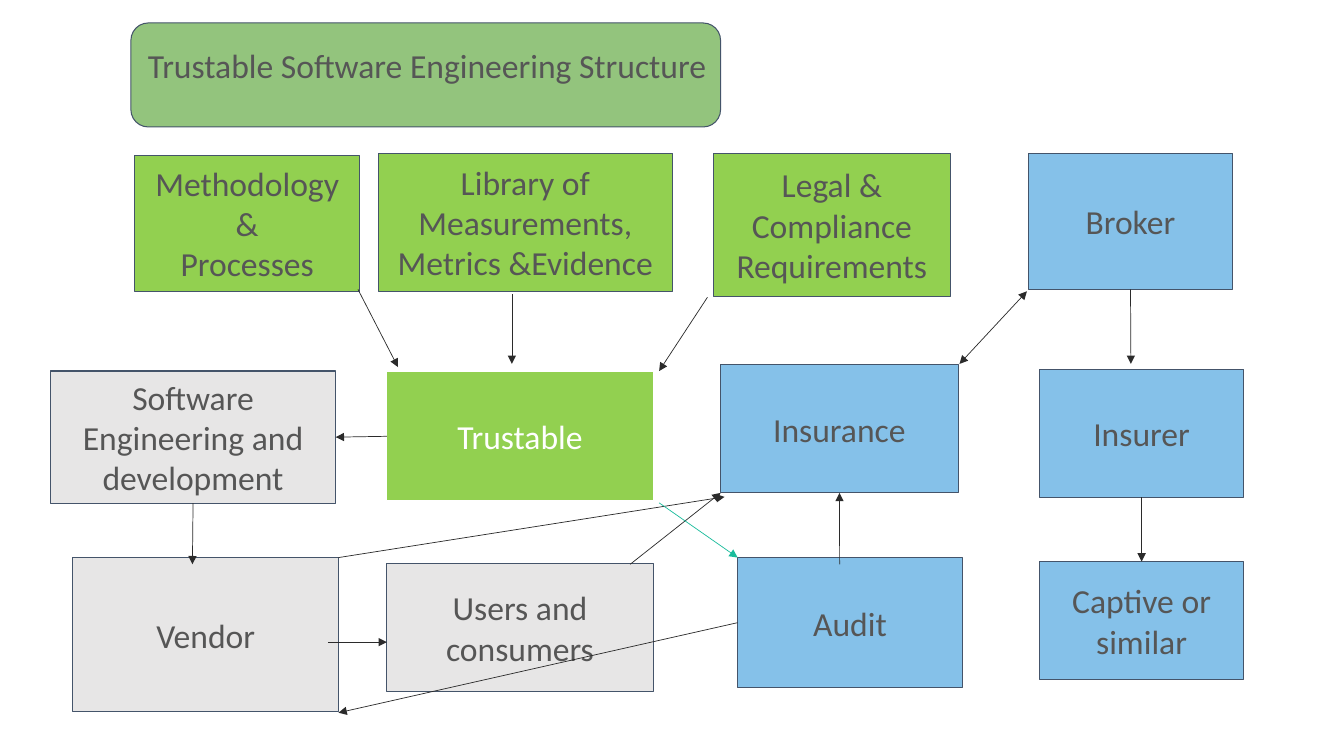
from dataclasses import dataclass

from lxml.etree import SubElement
from pptx import Presentation
from pptx.dml.color import RGBColor
from pptx.enum.shapes import MSO_CONNECTOR, MSO_SHAPE
from pptx.enum.text import MSO_ANCHOR, PP_ALIGN
from pptx.oxml.ns import qn
from pptx.util import Cm, Pt


@dataclass(frozen=True)
class Theme:
    """Colours, type and line weights of the slide."""

    font: str = "Calibri"
    text_size: float = 24
    border_width: float = 0.75
    arrow_width: float = 0.5
    inset: float = 0.33
    text: str = "565656"
    white: str = "FFFFFF"
    border: str = "44546A"
    arrow: str = "2B2B2B"
    teal: str = "1ABC9C"
    banner: str = "93C47D"
    green: str = "92D050"
    blue: str = "85C1E9"
    grey: str = "E7E6E6"


THEME = Theme()
TOP, LEFT, BOTTOM, RIGHT = range(4)

BOXES = {
    "broker": ("Broker", THEME.blue, (25.91, 3.86, 5.16, 3.43)),
    "insurer": ("Insurer", THEME.blue, (26.19, 9.3, 5.16, 3.23)),
    "captive": ("Captive or similar", THEME.blue, (26.19, 14.15, 5.16, 2.97)),
    "users": ("Users and consumers", THEME.grey, (9.75, 14.2, 6.71, 3.23)),
    "methodology": ("Methodology&\nProcesses", THEME.green, (3.4, 3.91, 5.66, 3.43)),
    "library": ("Library of Measurements,\vMetrics &Evidence", THEME.green,
                (9.53, 3.86, 7.42, 3.48)),
    "insurance": ("Insurance", THEME.blue, (18.16, 9.19, 5.99, 3.23)),
    "engineering": ("Software Engineering and development", THEME.grey,
                    (1.27, 9.35, 7.19, 3.33)),
    "vendor": ("Vendor", THEME.grey, (1.83, 14.05, 6.71, 3.89)),
    "legal": ("Legal & Compliance Requirements", THEME.green, (17.98, 3.86, 5.97, 3.61)),
    "audit": ("Audit", THEME.blue, (18.59, 14.05, 5.66, 3.28)),
}

ARROWS = [
    ((12.9, 7.42), (12.9, 9.17)),
    ((9.02, 7.29), (10.03, 9.25)),
    ((17.83, 7.49), (16.61, 9.35)),
    (("trustable", LEFT), ("engineering", RIGHT)),
    (("engineering", BOTTOM), (4.85, 14.22)),
    ((15.88, 14.22), (18.16, 12.42)),
    ((8.26, 16.18), (9.75, 16.18)),
    (("broker", BOTTOM), (28.5, 9.17)),
    (("insurer", BOTTOM), ("captive", TOP)),
    (("audit", LEFT), (8.53, 17.96)),
    ((21.16, 14.22), ("insurance", BOTTOM)),
    ((8.53, 14.05), (18.26, 12.52)),
]


def write_text(frame, text, color, align, anchor):
    """Fill a text frame and format all of its runs."""
    frame.word_wrap = True
    frame.vertical_anchor = anchor
    frame.margin_left = frame.margin_right = Cm(THEME.inset)
    frame.margin_top = frame.margin_bottom = Cm(THEME.inset)
    frame.text = text
    for paragraph in frame.paragraphs:
        paragraph.alignment = align
        for run in paragraph.runs:
            run.font.name = THEME.font
            run.font.size = Pt(THEME.text_size)
            run.font.color.rgb = RGBColor.from_string(color)


def add_panel(slide, preset, area, fill, border=THEME.border):
    """Add a filled and outlined shape without a shadow."""
    panel = slide.shapes.add_shape(preset, *map(Cm, area))
    panel.shadow.inherit = False
    panel.fill.solid()
    panel.fill.fore_color.rgb = RGBColor.from_string(fill)
    panel.line.color.rgb = RGBColor.from_string(border)
    panel.line.width = Pt(THEME.border_width)
    return panel


def add_box(slide, text, fill, area, color=THEME.text, border=THEME.border):
    """Add a rectangle with centred text."""
    box = add_panel(slide, MSO_SHAPE.RECTANGLE, area, fill, border)
    write_text(box.text_frame, text, color, PP_ALIGN.CENTER, MSO_ANCHOR.MIDDLE)
    return box


def add_title(slide, text):
    """Add the rounded banner and the title on it."""
    add_panel(slide, MSO_SHAPE.ROUNDED_RECTANGLE, (3.3, 0.58, 14.86, 2.62), THEME.banner)
    title = slide.shapes.add_textbox(*map(Cm, (3.4, 0.79, 14.86, 2.39)))
    write_text(title.text_frame, text, THEME.text, PP_ALIGN.LEFT, MSO_ANCHOR.TOP)


def add_arrow(slide, boxes, start, end, color=THEME.arrow, heads=("tailEnd",)):
    """Add an arrow whose ends are points or (box name, side) pairs."""
    points = [(0, 0) if spot[0] in boxes else spot for spot in (start, end)]
    arrow = slide.shapes.add_connector(
        MSO_CONNECTOR.STRAIGHT, *(Cm(value) for point in points for value in point))
    for spot, join in ((start, arrow.begin_connect), (end, arrow.end_connect)):
        if spot[0] in boxes:
            join(boxes[spot[0]], spot[1])
    arrow.line.color.rgb = RGBColor.from_string(color)
    arrow.line.width = Pt(THEME.arrow_width)
    properties = arrow._element.spPr
    for head in heads:
        SubElement(properties.find(qn("a:ln")), qn(f"a:{head}"), type="triangle")
    SubElement(properties, qn("a:effectLst"))


def main():
    """Build the slide and save it."""
    deck = Presentation()
    deck.slide_width, deck.slide_height = Cm(33.87), Cm(19.05)
    slide = deck.slides.add_slide(deck.slide_layouts[6])

    add_title(slide, "Trustable Software Engineering Structure")
    boxes = {name: add_box(slide, *content) for name, content in BOXES.items()}
    boxes["trustable"] = add_box(slide, "Trustable", THEME.green, (9.75, 9.37, 6.71, 3.25),
                                 color=THEME.white, border=THEME.white)

    for start, end in ARROWS:
        add_arrow(slide, boxes, start, end)
    add_arrow(slide, boxes, (25.88, 7.34), (24.18, 9.17), heads=("headEnd", "tailEnd"))
    add_arrow(slide, boxes, (16.61, 12.67), (18.59, 14.05), color=THEME.teal)

    deck.save("out.pptx")


if __name__ == "__main__":
    main()
